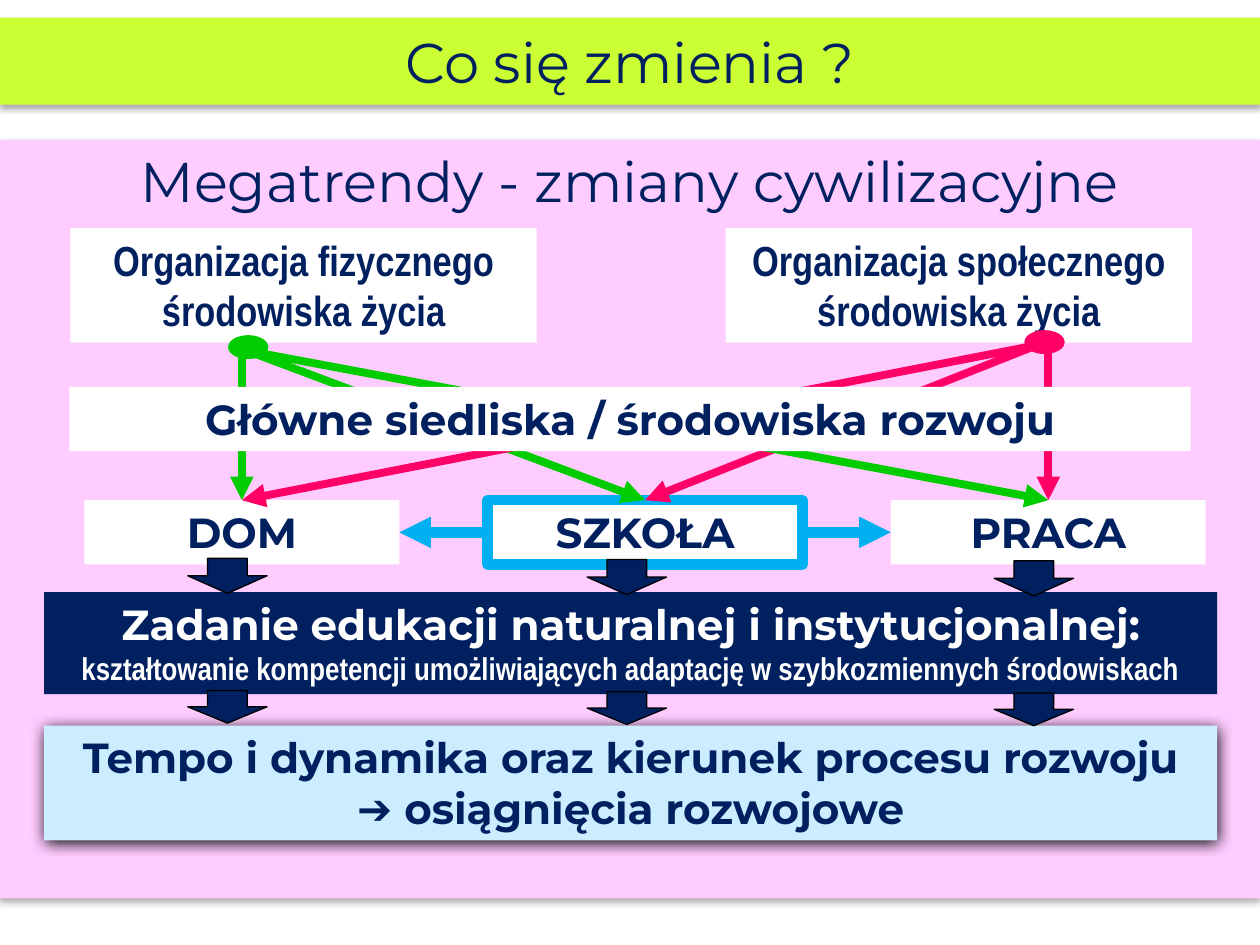
from lxml import etree
from pptx import Presentation
from pptx.dml.color import RGBColor
from pptx.enum.shapes import MSO_CONNECTOR, MSO_SHAPE
from pptx.enum.text import MSO_ANCHOR, MSO_AUTO_SIZE, PP_ALIGN
from pptx.oxml.ns import qn
from pptx.util import Inches, Pt

RECTANGLE, ELLIPSE, DOWN_ARROW = MSO_SHAPE.RECTANGLE, MSO_SHAPE.OVAL, MSO_SHAPE.DOWN_ARROW
STRAIGHT = MSO_CONNECTOR.STRAIGHT
CENTER, TOP, MIDDLE = PP_ALIGN.CENTER, MSO_ANCHOR.TOP, MSO_ANCHOR.MIDDLE
NO_AUTOFIT = MSO_AUTO_SIZE.NONE

NAVY = RGBColor(0x00, 0x20, 0x60)
WHITE = RGBColor(0xFF, 0xFF, 0xFF)
BLACK = RGBColor(0x00, 0x00, 0x00)
LIME = RGBColor(0xCC, 0xFF, 0x33)
PINK = RGBColor(0xFF, 0xCC, 0xFF)
PALE_BLUE = RGBColor(0xCC, 0xEC, 0xFF)
BLUE = RGBColor(0x00, 0xB0, 0xF0)
GREEN = RGBColor(0x00, 0xCC, 0x00)
RED = RGBColor(0xFF, 0x00, 0x66)

DISPLAY, NARROW = "Montserrat", "Arial Narrow"
SIDE_TOP, SIDE_LEFT, SIDE_RIGHT = 0, 1, 3

# Grid: three settings in equal columns, two wide bands below them
SETTING_LEFT, SETTING_STEP, SETTING_WIDTH, SETTING_TOP = 0.67, 3.2, 2.5, 3.97
BAND_LEFT, BAND_WIDTH, LINE_BOX_HEIGHT = 0.35, 9.31, 0.51
ARROW_COLUMNS = (1.49, 4.66, 7.89)
ARROW_ROWS = ((4.43, 0.28), (5.48, 0.26))


def write_text(shape, lines, size=24, font=DISPLAY, color=NAVY, bold=True, anchor=TOP):
    """Write centred lines; a line is a text or a (text, size, font) tuple."""
    frame = shape.text_frame
    frame.word_wrap = True
    frame.auto_size = NO_AUTOFIT
    frame.vertical_anchor = anchor
    for index, line in enumerate(lines):
        text, line_size, line_font = (line, size, font) if isinstance(line, str) else line
        paragraph = frame.paragraphs[0] if index == 0 else frame.add_paragraph()
        paragraph.alignment = CENTER
        run = paragraph.add_run()
        run.text = text
        run.font.size = Pt(line_size)
        run.font.name = line_font
        run.font.bold = bold
        run.font.color.rgb = color


def add_box(slide, left, top, width, height, fill, kind=RECTANGLE, line=None, weight=0.75):
    shape = slide.shapes.add_shape(
        kind, Inches(left), Inches(top), Inches(width), Inches(height))
    shape.shadow.inherit = False
    shape.fill.solid()
    shape.fill.fore_color.rgb = fill
    if line is None:
        shape.line.fill.background()
    else:
        shape.line.color.rgb = line
        shape.line.width = Pt(weight)
    return shape


def add_shadow(shape, blur=3.5, distance=2.2, opacity=32):
    shape.shadow.inherit = False
    effects = shape._element.spPr.find(qn("a:effectLst"))
    shadow = etree.SubElement(
        effects, qn("a:outerShdw"), blurRad=str(Pt(blur)), dist=str(Pt(distance)),
        dir="5400000", algn="ctr", rotWithShape="0")
    color = etree.SubElement(shadow, qn("a:srgbClr"), val=str(BLACK))
    etree.SubElement(color, qn("a:alpha"), val=str(opacity * 1000))


def add_arrow(slide, target, side, color, weight, start=None, source=None):
    """Draw an arrow to a box side, from a point or from another box's right side."""
    x, y = start or (0, 0)
    connector = slide.shapes.add_connector(
        STRAIGHT, Inches(x), Inches(y), Inches(x), Inches(y))
    if source is not None:
        connector.begin_connect(source, SIDE_RIGHT)
    connector.end_connect(target, side)
    connector.line.color.rgb = color
    connector.line.width = Pt(weight)
    line = connector.line._get_or_add_ln()
    if source is not None:
        etree.SubElement(line, qn("a:headEnd"), type="triangle")
    etree.SubElement(line, qn("a:tailEnd"), type="triangle")
    etree.SubElement(connector._element.spPr, qn("a:effectLst"))


def add_title(slide, text):
    title = slide.shapes.title
    title.left, title.top = 0, Inches(0.14)
    title.width, title.height = Inches(10), Inches(0.69)
    title.fill.solid()
    title.fill.fore_color.rgb = LIME
    add_shadow(title)
    write_text(title, [text], size=32, bold=False, anchor=MIDDLE)


def add_setting(slide, column, text, **outline):
    box = add_box(slide, SETTING_LEFT + column * SETTING_STEP, SETTING_TOP,
                  SETTING_WIDTH, LINE_BOX_HEIGHT, WHITE, **outline)
    write_text(box, [text])
    return box


def main():
    presentation = Presentation()
    presentation.slide_width, presentation.slide_height = Inches(10), Inches(7.5)
    slide = presentation.slides.add_slide(presentation.slide_layouts[5])
    add_title(slide, "Co się zmienia ?")

    # Background panel with its heading
    panel = add_box(slide, 0, 1.11, 10, 6.02, PINK)
    add_shadow(panel)
    write_text(panel, ["Megatrendy - zmiany cywilizacyjne"], size=32, bold=False)

    # Two kinds of change
    for left, kind in ((0.56, "fizycznego"), (5.76, "społecznego")):
        box = add_box(slide, left, 1.81, 3.7, 0.91, WHITE)
        write_text(box, [f"Organizacja {kind}", "środowiska życia"], font=NARROW)

    # Result and task bands
    result = add_box(slide, BAND_LEFT, 5.76, BAND_WIDTH, 0.91, PALE_BLUE)
    add_shadow(result, blur=8.5, distance=1, opacity=100)
    write_text(result, ["Tempo i dynamika oraz kierunek procesu rozwoju",
                        "➔ osiągnięcia rozwojowe"])
    task = add_box(slide, BAND_LEFT, 4.7, BAND_WIDTH, 0.81, NAVY)
    write_text(task, [
        "Zadanie edukacji naturalnej i instytucjonalnej:",
        ("kształtowanie kompetencji umożliwiających adaptację "
         "w szybkozmiennych środowiskach", 18, NARROW),
    ], color=WHITE)

    # Settings; the school lies over the arrow between home and work
    home = add_setting(slide, 0, "DOM")
    work = add_setting(slide, 2, "PRACA")
    add_arrow(slide, work, SIDE_LEFT, BLUE, 6, source=home)
    school = add_setting(slide, 1, "SZKOŁA", line=BLUE, weight=6)

    # Block arrows down to the bands, each column slightly lower
    for top, height in ARROW_ROWS:
        for column, left in enumerate(ARROW_COLUMNS):
            add_box(slide, left, top + column * 0.01, 0.63, height, NAVY,
                    kind=DOWN_ARROW, line=BLACK)

    # Influence of each kind of change on every setting
    for start, target, color in (
        ((1.92, 2.72), home, GREEN),
        ((8.32, 2.72), work, RED),
        ((1.95, 2.78), school, GREEN),
        ((8.28, 2.72), school, RED),
        ((1.94, 2.78), work, GREEN),
        ((8.33, 2.72), home, RED),
    ):
        add_arrow(slide, target, SIDE_TOP, color, 4.5, start=start)
    for left, top, color in ((1.81, 2.66, GREEN), (8.13, 2.62, RED)):
        add_box(slide, left, top, 0.32, 0.19, color, kind=ELLIPSE)

    # Heading strip over the arrows
    strip = add_box(slide, 0.55, 3.07, 8.9, LINE_BOX_HEIGHT, WHITE)
    write_text(strip, ["Główne siedliska / środowiska rozwoju"])

    presentation.save("out.pptx")


if __name__ == "__main__":
    main()
